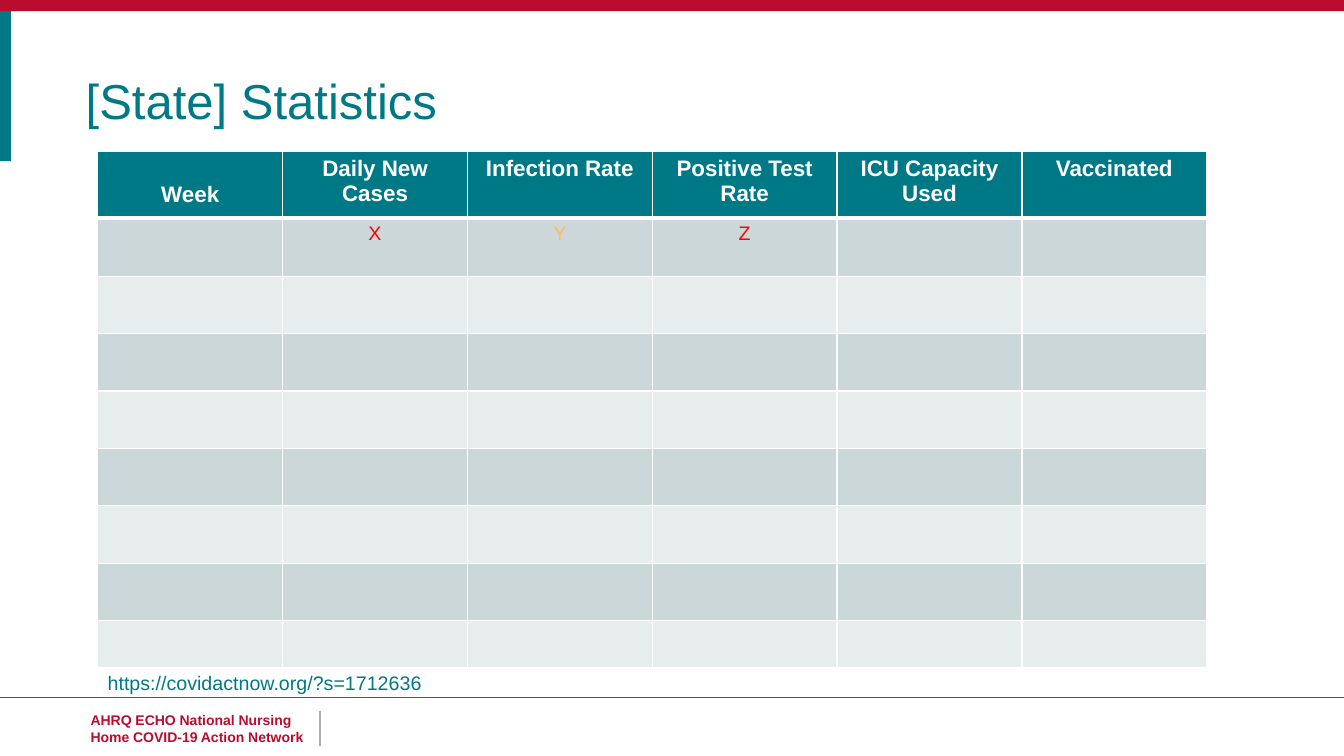
"""Build the state statistics slide with its weekly table."""
from dataclasses import dataclass

from lxml.etree import SubElement
from pptx import Presentation
from pptx.dml.color import RGBColor
from pptx.enum.shapes import MSO_CONNECTOR, MSO_SHAPE
from pptx.enum.text import MSO_ANCHOR, MSO_AUTO_SIZE, PP_ALIGN
from pptx.oxml.ns import qn
from pptx.util import Inches, Pt

TEAL, RED, WHITE = "007986", "BA0C2F", "FFFFFF"
BANDS = ("CCD7D9", "E7ECED")
HEADERS = ("Week", "Daily New Cases", "Infection Rate", "Positive Test Rate",
           "ICU Capacity Used", "Vaccinated")
ROW_HEIGHTS = (0.66, 0.58, *[0.57] * 6, 0.47)


@dataclass
class Bar:
    left: float
    top: float
    width: float
    height: float
    color: str


@dataclass
class Rule:
    start: tuple[float, float]
    end: tuple[float, float]
    color: str
    weight: float


@dataclass
class Label:
    left: float
    top: float
    width: float
    height: float
    text: str
    size: float
    color: str
    bold: bool = False
    wrap: bool = True


@dataclass
class Entry:
    text: str
    color: str


BARS = (Bar(0, 0, 0.11, 1.6, TEAL), Bar(0, 0, 13.33, 0.11, RED))
RULES = (Rule((0, 6.92), (13.33, 6.92), TEAL, 0.5),
         Rule((3.17, 7.05), (3.17, 7.4), "AFABAB", 1.5))
LABELS = (
    Label(0.8, 7.01, 3.5, 0.44,
          "AHRQ ECHO National Nursing\nHome COVID-19 Action Network", 10, RED, bold=True),
    Label(0.97, 6.61, 3.33, 0.34, "https://covidactnow.org/?s=1712636", 14, TEAL, wrap=False),
)
FIRST_WEEK = {1: Entry("X", "FF0000"), 2: Entry("Y", "FFBB5B"), 3: Entry("Z", "FF0000")}


def rgb(color: str) -> RGBColor:
    return RGBColor.from_string(color)


def format_text(text_frame, size: float, color: str, bold: bool = False) -> None:
    for paragraph in text_frame.paragraphs:
        for run in paragraph.runs:
            run.font.name = "Arial"
            run.font.size = Pt(size)
            run.font.bold = bold
            run.font.color.rgb = rgb(color)


def add_bar(slide, bar: Bar) -> None:
    shape = slide.shapes.add_shape(MSO_SHAPE.RECTANGLE, Inches(bar.left), Inches(bar.top),
                                   Inches(bar.width), Inches(bar.height))
    shape.shadow.inherit = False
    shape.fill.solid()
    shape.fill.fore_color.rgb = rgb(bar.color)
    shape.line.fill.background()


def add_rule(slide, rule: Rule) -> None:
    connector = slide.shapes.add_connector(
        MSO_CONNECTOR.STRAIGHT, *map(Inches, rule.start), *map(Inches, rule.end))
    connector.line.color.rgb = rgb(rule.color)
    connector.line.width = Pt(rule.weight)
    SubElement(connector._element.spPr, qn("a:effectLst"))


def add_label(slide, label: Label) -> None:
    shape = slide.shapes.add_textbox(Inches(label.left), Inches(label.top),
                                     Inches(label.width), Inches(label.height))
    text_frame = shape.text_frame
    text_frame.word_wrap = label.wrap
    text_frame.auto_size = MSO_AUTO_SIZE.SHAPE_TO_FIT_TEXT
    text_frame.text = label.text
    format_text(text_frame, label.size, label.color, label.bold)


def set_title(slide, text: str) -> None:
    title = slide.shapes.title
    title.left, title.top = Inches(0.75), Inches(0.67)
    title.width, title.height = Inches(11.84), Inches(0.55)
    text_frame = title.text_frame
    text_frame.auto_size = MSO_AUTO_SIZE.NONE
    text_frame.vertical_anchor = MSO_ANCHOR.TOP
    text_frame.margin_top, text_frame.margin_bottom = Inches(0.1), 0
    text_frame.text = text
    paragraph = text_frame.paragraphs[0]
    paragraph.alignment = PP_ALIGN.LEFT
    paragraph.line_spacing = 0.9
    format_text(text_frame, 35, TEAL)


def set_borders(cell, top: float, bottom: float) -> None:
    properties = cell._tc.get_or_add_tcPr()
    for side, weight in (("L", 1), ("R", 1), ("T", top), ("B", bottom)):
        border = SubElement(properties, qn(f"a:ln{side}"), w=str(Pt(weight)))
        fill = SubElement(border, qn("a:solidFill"))
        SubElement(fill, qn("a:srgbClr"), val=WHITE)


def fill_cell(cell, color: str) -> None:
    cell.fill.solid()
    cell.fill.fore_color.rgb = rgb(color)


def write_cell(cell, entry: Entry, size: float, bold: bool) -> None:
    cell.text_frame.text = entry.text
    cell.text_frame.paragraphs[0].alignment = PP_ALIGN.CENTER
    format_text(cell.text_frame, size, entry.color, bold)


def add_statistics(slide) -> None:
    table = slide.shapes.add_table(len(ROW_HEIGHTS), len(HEADERS), Inches(0.97), Inches(1.5),
                                   Inches(11), Inches(sum(ROW_HEIGHTS))).table
    for column in table.columns:
        column.width = Inches(11 / len(HEADERS))
    for row_index, height in enumerate(ROW_HEIGHTS):
        table.rows[row_index].height = Inches(height)
        for column_index, header in enumerate(HEADERS):
            cell = table.cell(row_index, column_index)
            set_borders(cell, 3 if row_index == 1 else 1, 3 if row_index == 0 else 1)
            if row_index == 0:
                fill_cell(cell, TEAL)
                write_cell(cell, Entry(header, WHITE), 16, True)
            else:
                fill_cell(cell, BANDS[(row_index - 1) % 2])
                if row_index == 1 and column_index in FIRST_WEEK:
                    write_cell(cell, FIRST_WEEK[column_index], 14, False)
    week = table.cell(0, 0)
    week.vertical_anchor = MSO_ANCHOR.BOTTOM
    week.margin_bottom = Inches(0.1)


def main() -> None:
    presentation = Presentation()
    presentation.slide_width, presentation.slide_height = Inches(13.33), Inches(7.5)
    slide = presentation.slides.add_slide(presentation.slide_layouts[5])
    for bar in BARS:
        add_bar(slide, bar)
    for rule in RULES:
        add_rule(slide, rule)
    set_title(slide, "[State] Statistics")
    add_statistics(slide)
    for label in LABELS:
        add_label(slide, label)
    presentation.save("out.pptx")


if __name__ == "__main__":
    main()
